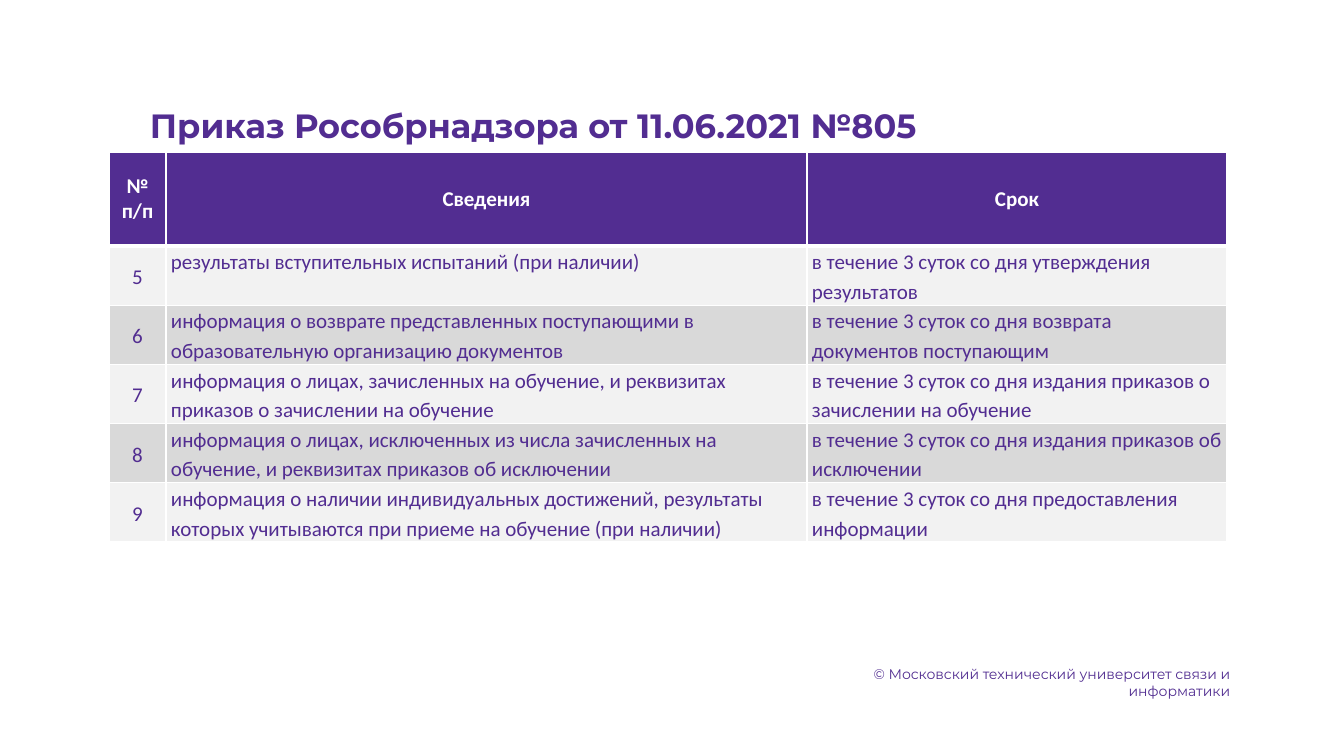
from lxml import etree
from pptx import Presentation
from pptx.dml.color import RGBColor
from pptx.enum.text import MSO_ANCHOR, PP_ALIGN
from pptx.oxml.ns import qn
from pptx.util import Pt

# Content
TITLE = "Приказ Рособрнадзора от 11.06.2021 №805"
FOOTER = "© Московский технический университет связи и информатики"
HEADER = ("№ п/п", "Сведения", "Срок")
FIRST_NUMBER = 5
ITEMS = [
    ("результаты вступительных испытаний (при наличии)",
     "в течение 3 суток со дня утверждения результатов"),
    ("информация о возврате представленных поступающими в образовательную организацию документов",
     "в течение 3 суток со дня возврата документов поступающим"),
    ("информация о лицах, зачисленных на обучение, и реквизитах приказов о зачислении на обучение",
     "в течение 3 суток со дня издания приказов о зачислении на обучение"),
    ("информация о лицах, исключенных из числа зачисленных на обучение, и реквизитах приказов об исключении",
     "в течение 3 суток со дня издания приказов об исключении"),
    ("информация о наличии индивидуальных достижений, результаты которых учитываются при приеме "
     "на обучение (при наличии)",
     "в течение 3 суток со дня предоставления информации"),
]

# Style
PURPLE = RGBColor(0x52, 0x2D, 0x91)
FOOTER_PURPLE = RGBColor(0x52, 0x2E, 0x91)
WHITE = RGBColor(0xFF, 0xFF, 0xFF)
BANDS = (RGBColor(0xF2, 0xF2, 0xF2), RGBColor(0xD9, 0xD9, 0xD9))
LEFT, CENTER, RIGHT = PP_ALIGN.LEFT, PP_ALIGN.CENTER, PP_ALIGN.RIGHT
TOP, MIDDLE = MSO_ANCHOR.TOP, MSO_ANCHOR.MIDDLE

# Layout in px
TABLE_LEFT, TABLE_TOP = 109, 152
COLUMN_WIDTHS = (57, 641, 420)
HEADER_HEIGHT, ROW_HEIGHT = 94, 59


def px(length):
    return round(length * 914400 / 100.8)


def set_font(para, name, size, color, bold=False):
    para.font.name = name
    para.font.size = Pt(size)
    para.font.color.rgb = color
    para.font.bold = bold


def add_text(page, frame, text, align, size, color, bold=False):
    box = page.shapes.add_textbox(*map(px, frame))
    box.text_frame.word_wrap = True
    para = box.text_frame.paragraphs[0]
    para.text = text
    para.alignment = align
    set_font(para, "Montserrat", size, color, bold)


def set_borders(cell, top, bottom):
    properties = cell._tc.get_or_add_tcPr()
    widths = {"a:lnL": 1, "a:lnR": 1, "a:lnT": top, "a:lnB": bottom}
    for index, (tag, width) in enumerate(widths.items()):
        line = etree.Element(qn(tag), w=str(Pt(width)))
        fill = etree.SubElement(line, qn("a:solidFill"))
        etree.SubElement(fill, qn("a:srgbClr"), val=str(WHITE))
        properties.insert(index, line)


def fill_cell(cell, text, is_header, is_centered, background):
    cell.text = text
    cell.vertical_anchor = MIDDLE if is_centered else TOP
    cell.margin_left = cell.margin_right = px(1 if is_centered else 5)
    cell.margin_top = cell.margin_bottom = px(1 if is_centered else 0)
    cell.fill.solid()
    cell.fill.fore_color.rgb = background
    para = cell.text_frame.paragraphs[0]
    para.alignment = CENTER if is_centered else LEFT
    if not is_header:
        para.line_spacing = 1.15
    set_font(para, "Calibri", 15, WHITE if is_header else PURPLE, is_header)


deck = Presentation()
deck.slide_width, deck.slide_height = px(1344), px(756)
page = deck.slides.add_slide(deck.slide_layouts[6])

# Table
rows = [HEADER] + [(str(number), *item) for number, item in enumerate(ITEMS, FIRST_NUMBER)]
heights = [HEADER_HEIGHT] + [ROW_HEIGHT] * len(ITEMS)
table = page.shapes.add_table(
    len(rows), len(HEADER), px(TABLE_LEFT), px(TABLE_TOP),
    px(sum(COLUMN_WIDTHS)), px(sum(heights))).table
table.horz_banding = False
for column, width in zip(table.columns, COLUMN_WIDTHS):
    column.width = px(width)
for row_index, texts in enumerate(rows):
    table.rows[row_index].height = px(heights[row_index])
    is_header = row_index == 0
    background = PURPLE if is_header else BANDS[(row_index - 1) % 2]
    for column_index, text in enumerate(texts):
        cell = table.cell(row_index, column_index)
        fill_cell(cell, text, is_header, is_header or column_index == 0, background)
        set_borders(cell, 3 if row_index == 1 else 1, 3 if is_header else 1)

# Title and footer
add_text(page, (140, 100, 1047, 50), TITLE, LEFT, 24, PURPLE, True)
add_text(page, (836, 661, 404, 27), FOOTER, RIGHT, 10, FOOTER_PURPLE)

deck.save("out.pptx")
